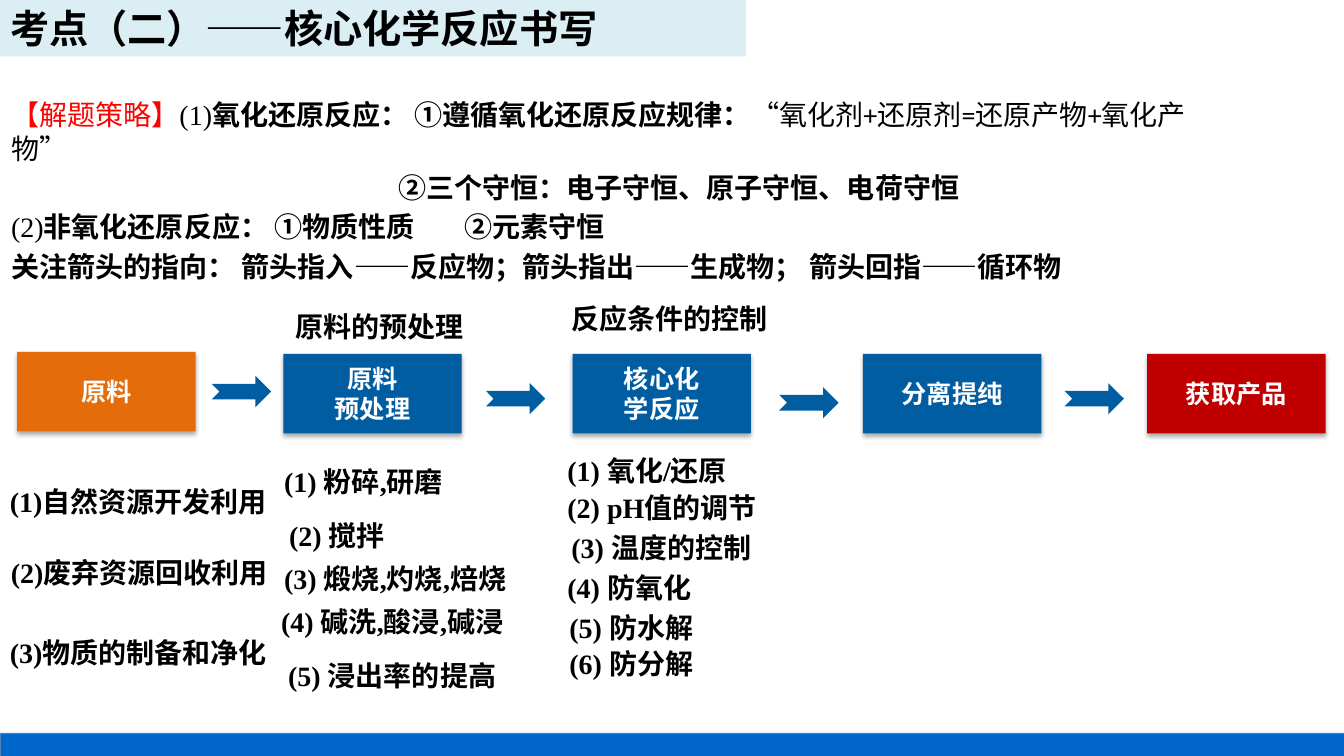
from collections import namedtuple
from lxml import etree
from pptx import Presentation
from pptx.dml.color import RGBColor
from pptx.enum.shapes import MSO_SHAPE as Shape
from pptx.enum.text import MSO_ANCHOR as Anchor, MSO_AUTO_SIZE as AutoSize, PP_ALIGN as Align
from pptx.oxml.ns import qn
from pptx.util import Inches, Pt

COLORS = {
    "black": "000000", "white": "FFFFFF", "red": "FF0000", "blue": "005DA2",
    "orange": "E46C0A", "crimson": "C00000", "pale": "DBEEF4",
    "footer": "0066CC", "footer_line": "4F81BD",
}
SERIF, SANS = "Times New Roman", "Calibri"
COLUMNS, ROWS = 133.33, 75
WIDTH, HEIGHT = Inches(13.33), Inches(7.5)

Box = namedtuple("Box", "left top width height")

STEPS = [
    ("原料", 1.7, 0, "orange"),
    ("原料\n预处理", 28.1, 0.2, "blue"),
    ("核心化\n学反应", 56.8, 0.2, "blue"),
    ("分离提纯", 85.6, 0.2, "blue"),
    ("获取产品", 113.8, 0.2, "crimson"),
]
ARROWS = [(21, 2.4), (48.2, 3.1), (77.3, 3.5), (105.6, 3.1)]
CAPTIONS = [
    ("原料的预处理", Box(27.3, 28.6, 20.7, 5.4)),
    ("反应条件的控制", Box(54.9, 27.8, 23, 5.4)),
]
SOURCES = [("(1)自然资源开发利用", 0, 0), ("(2)废弃资源回收利用", 0.1, 7.1),
           ("(3)物质的制备和净化", 0, 15)]
PRETREATMENT = [("(1) 粉碎,研磨", 0.3, 0), ("(2) 搅拌", 0.8, 5.4),
                ("(3) 煅烧,灼烧,焙烧", 0.3, 9.7), ("(4) 碱洗,酸浸,碱浸", 0, 13.9),
                ("(5) 浸出率的提高", 0.7, 19.3)]
CONDITIONS = [("(1) 氧化/还原", 0, 0), ("(2) pH值的调节", 0, 3.7),
              ("(3) 温度的控制", 0.4, 7.6), ("(4) 防氧化", 0, 11.6),
              ("(5) 防水解", 0.2, 15.6), ("(6) 防分解", 0.2, 19.1)]

STRATEGY = [
    (0, 43.2, [("【解题策略】", "red", False, SERIF), ("(1)", "black", False, SERIF),
               ("氧化还原反应：\t①遵循氧化还原反应规律：", "black", True, SERIF),
               ("“氧化剂+还原剂=还原产物+氧化产物”", "black", False, SANS)]),
    (38.4, None, [("②三个守恒：电子守恒、原子守恒、电荷守恒", "black", True, SERIF)]),
    (0, 44.4, [("(2)", "black", False, SERIF),
               ("非氧化还原反应： ①物质性质\t②元素守恒", "black", True, SERIF)]),
    (0, None, [("关注箭头的指向： 箭头指入——反应物；箭头指出——生成物； 箭头回指——循环物",
                "black", True, SERIF)]),
]


def color(name):
    return RGBColor.from_string(COLORS[name])


def across(columns):
    return round(WIDTH * columns / COLUMNS)


def down(rows):
    return round(HEIGHT * rows / ROWS)


def emu(box):
    return across(box.left), down(box.top), across(box.width), down(box.height)


def place(shape, box):
    shape.left, shape.top, shape.width, shape.height = emu(box)


def style(span, size, name, bold, face):
    span.font.size, span.font.bold, span.font.name = Pt(size), bold, face
    span.font.color.rgb = color(name)
    span._r.get_or_add_rPr().set("lang", "zh-CN")


def style_frame(frame, size, name, face, align=Align.LEFT, spacing=None):
    frame.word_wrap = True
    for para in frame.paragraphs:
        para.alignment = align
        if spacing:
            para.line_spacing = spacing
        for span in para.runs:
            style(span, size, name, True, face)


def add_filled(shapes, kind, box, name):
    shape = shapes.add_shape(kind, *emu(box))
    shape.shadow.inherit = False
    shape.fill.solid()
    shape.fill.fore_color.rgb = color(name)
    shape.line.fill.background()
    return shape


def add_label(shapes, text, box, align=Align.LEFT, spacing=None):
    frame = shapes.add_textbox(*emu(box)).text_frame
    frame.text = text
    style_frame(frame, 20, "black", SERIF, align, spacing)


def add_drop_shadow(shape):
    effects = shape._element.spPr.find(qn("a:effectLst"))
    shadow = etree.SubElement(effects, qn("a:outerShdw"), blurRad=str(Pt(3.5)),
                              dist=str(Pt(2.2)), dir="5400000", rotWithShape="0")
    tint = etree.SubElement(shadow, qn("a:srgbClr"), val=COLORS["black"])
    etree.SubElement(tint, qn("a:alpha"), val="32000")


def build_title(page, box):
    title = page.shapes.title
    place(title, box)
    title.fill.solid()
    title.fill.fore_color.rgb = color("pale")
    frame = title.text_frame
    frame.text = "考点（二）——核心化学反应书写"
    frame.auto_size, frame.vertical_anchor = AutoSize.NONE, Anchor.TOP
    style_frame(frame, 28, "black", SANS)


def build_strategy(page, box):
    body = page.placeholders[1]
    place(body, box)
    frame = body.text_frame
    frame.auto_size, frame.word_wrap = AutoSize.NONE, True
    for index, (indent, tab, spans) in enumerate(STRATEGY):
        para = frame.add_paragraph() if index else frame.paragraphs[0]
        props = para._p.get_or_add_pPr()
        props.set("marL", str(across(indent)))
        props.set("indent", "0")
        etree.SubElement(props, qn("a:buNone"))
        if tab:
            tabs = etree.SubElement(props, qn("a:tabLst"))
            etree.SubElement(tabs, qn("a:tab"), pos=str(across(tab)), algn="l")
        para.space_before = Pt(4 if index else 0)
        for text, name, bold, face in spans:
            span = para.add_run()
            span.text = text
            style(span, 20, name, bold, face)


def build_flow(page, box):
    for text, left, top, name in STEPS:
        step = add_filled(page.shapes, Shape.RECTANGLE,
                          Box(box.left + left, box.top + top, 17.7, 7.9), name)
        add_drop_shadow(step)
        step.text_frame.text = text
        step.text_frame.vertical_anchor = Anchor.MIDDLE
        style_frame(step.text_frame, 18, "white", SERIF, Align.CENTER)
    for left, top in ARROWS:
        add_filled(page.shapes, Shape.NOTCHED_RIGHT_ARROW,
                   Box(box.left + left, box.top + top, 5.9, 3.1), "blue")


def build_list(page, box, items, row_height, spacing=None):
    group = page.shapes.add_group_shape()
    for text, left, top in items:
        add_label(group.shapes, text,
                  Box(box.left + left, box.top + top, box.width, row_height), spacing=spacing)


def build_footer(page, box):
    footer = add_filled(page.shapes, Shape.RECTANGLE, box, "footer")
    footer.line.color.rgb = color("footer_line")
    footer.line.width = Pt(0.25)


def main():
    deck = Presentation()
    deck.slide_width, deck.slide_height = WIDTH, HEIGHT
    page = deck.slides.add_slide(deck.slide_layouts[1])
    build_footer(page, Box(0, 72.7, COLUMNS, 2.3))
    build_flow(page, Box(0, 34.9, COLUMNS, 8.1))
    for text, box in CAPTIONS:
        add_label(page.shapes, text, box, Align.CENTER, 1.5)
    build_list(page, Box(0, 45.9, 32, 20.4), SOURCES, 5.4, 1.5)
    build_list(page, Box(26.9, 43.9, 27.4, 24.7), PRETREATMENT, 5.4, 1.5)
    build_list(page, Box(55.3, 44.5, 27.4, 23.5), CONDITIONS, 4.4)
    build_strategy(page, Box(0.1, 9.2, 123.6, 20.5))
    build_title(page, Box(0, -0.1, 74, 5.7))
    deck.save("out.pptx")


if __name__ == "__main__":
    main()
